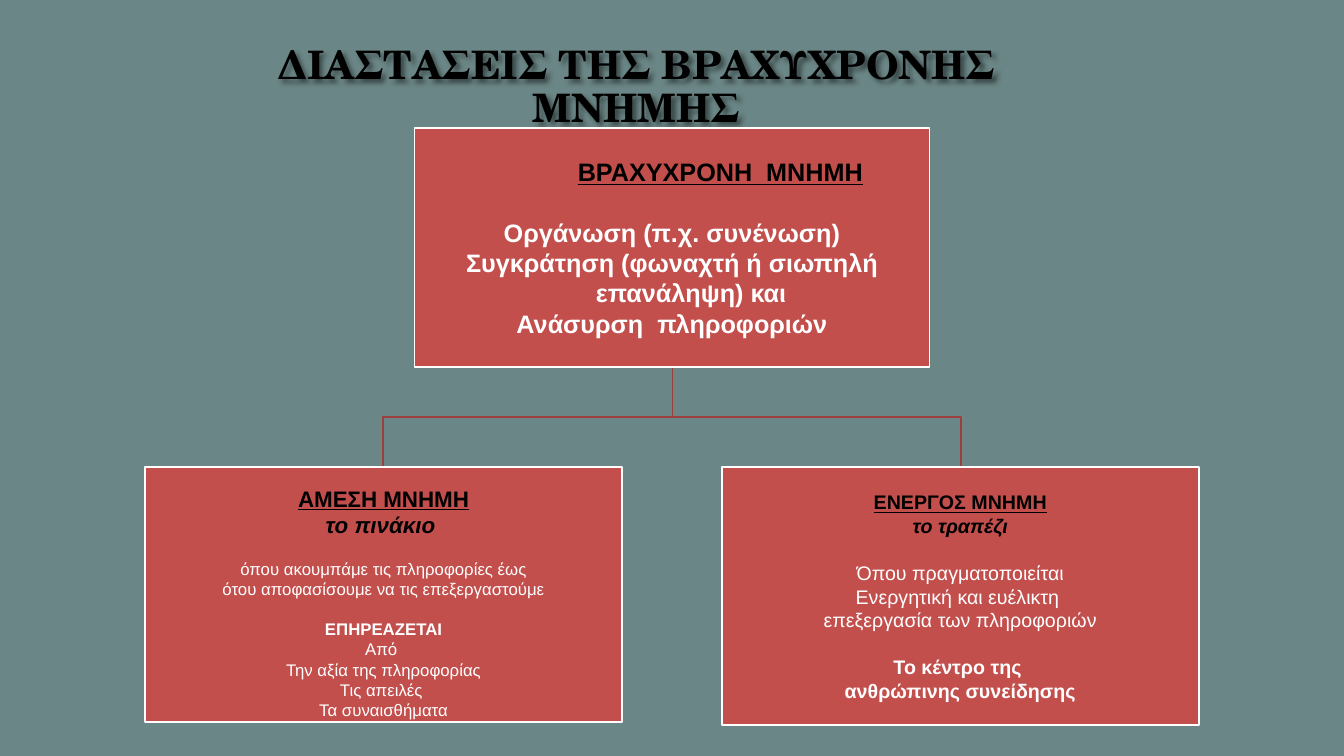
from lxml import etree
from pptx import Presentation
from pptx.dml.color import RGBColor
from pptx.enum.shapes import MSO_SHAPE as Shape
from pptx.enum.text import MSO_ANCHOR as Anchor, PP_ALIGN as Align
from pptx.oxml.ns import qn
from pptx.util import Inches, Pt

TEAL = RGBColor(0x6B, 0x86, 0x86)
RED = RGBColor(0xC3, 0x4F, 0x4D)
DARK_RED = RGBColor(0x9C, 0x3F, 0x3E)
WHITE = RGBColor(0xFF, 0xFF, 0xFF)
BLACK = RGBColor(0, 0, 0)

HEADING = dict(bold=True, underline=True, color=BLACK)
IMAGE = dict(bold=True, italic=True, color=BLACK)
STRONG = dict(bold=True, color=WHITE)
PLAIN = dict(bold=False, color=WHITE)


def add_line(para, text, size, style, font="Arial"):
    para.alignment = Align.CENTER
    span = para.add_run()
    span.text = text
    span.font.name = font
    span.font.size = Pt(size)
    for name, value in style.items():
        if name == "color":
            span.font.color.rgb = value
        else:
            setattr(span.font, name, value)


deck = Presentation()
deck.slide_width, deck.slide_height = Inches(13.33), Inches(7.5)
page = deck.slides.add_slide(deck.slide_layouts[6])
page.background.fill.solid()
page.background.fill.fore_color.rgb = TEAL

# Title with a soft shadow
title = page.shapes.add_textbox(Inches(2.17), Inches(0.25), Inches(8.28), Inches(1.25))
title.text_frame.word_wrap = True
title.text_frame.vertical_anchor = Anchor.MIDDLE
para = title.text_frame.paragraphs[0]
para.line_spacing = 0.9
add_line(para, "ΔΙΑΣΤΑΣΕΙΣ ΤΗΣ ΒΡΑΧΥΧΡΟΝΗΣ ΜΝΗΜΗΣ", 28,
         dict(bold=True, color=BLACK), "TeX Gyre Schola")
effects = etree.SubElement(title.element.spPr, qn("a:effectLst"))
shadow = etree.SubElement(effects, qn("a:outerShdw"), blurRad="38100", dist="38100", dir="2700000")
shade = etree.SubElement(shadow, qn("a:srgbClr"), val="000000")
etree.SubElement(shade, qn("a:alpha"), val="45000")

# Branches from the parent box to its two children
for child_x in (9.53, 3.8):
    pen = page.shapes.build_freeform(Inches(6.67), Inches(3.64))
    pen.add_line_segments([(Inches(x), Inches(y)) for x, y in
                           ((6.67, 4.14), (child_x, 4.14), (child_x, 4.63))], close=False)
    branch = pen.convert_to_shape()
    branch.shadow.inherit = False
    branch.fill.background()
    branch.line.color.rgb = DARK_RED
    branch.line.width = Pt(1.25)

# Boxes: position, top and bottom inset, hanging indent,
# then lines of text, size, style and space before in points
BOXES = [
    ((4.11, 1.27, 5.11, 2.37), 0.01, 0.01, 0.38, [
        ("ΒΡΑΧΥΧΡΟΝΗ  ΜΝΗΜΗ", 18, HEADING, 0),
        ("Οργάνωση (π.χ. συνένωση)", 18, STRONG, 21.6),
        ("Συγκράτηση (φωναχτή ή σιωπηλή επανάληψη) και", 18, STRONG, 0),
        ("Ανάσυρση  πληροφοριών", 18, STRONG, 0)]),
    ((1.44, 4.63, 4.73, 2.53), 0.17, 0.01, 0, [
        ("ΑΜΕΣΗ ΜΝΗΜΗ", 16, HEADING, 0),
        ("το πινάκιο ", 16, IMAGE, 0),
        ("όπου ακουμπάμε τις πληροφορίες έως", 12, PLAIN, 14.4),
        ("ότου αποφασίσουμε να τις επεξεργαστούμε", 12, PLAIN, 0),
        ("ΕΠΗΡΕΑΖΕΤΑΙ", 12, STRONG, 14.4),
        ("Από ", 12, PLAIN, 0),
        ("Την αξία της πληροφορίας", 12, PLAIN, 0),
        ("Τις απειλές ", 12, PLAIN, 0),
        ("Τα συναισθήματα", 12, PLAIN, 0)]),
    ((7.16, 4.63, 4.73, 2.56), 0.24, 0.23, 0, [
        ("ΕΝΕΡΓΟΣ ΜΝΗΜΗ", 14, HEADING, 0),
        ("το τραπέζι", 14, IMAGE, 0),
        ("Όπου πραγματοποιείται", 14, PLAIN, 16.8),
        ("Ενεργητική και ευέλικτη ", 14, PLAIN, 0),
        ("επεξεργασία των πληροφοριών", 14, PLAIN, 0),
        ("Το κέντρο της ", 14, STRONG, 16.8),
        ("ανθρώπινης συνείδησης", 14, STRONG, 0)]),
]
for place, top, bottom, hanging, lines in BOXES:
    box = page.shapes.add_shape(Shape.RECTANGLE, *map(Inches, place))
    box.shadow.inherit = False
    box.fill.solid()
    box.fill.fore_color.rgb = RED
    box.line.color.rgb = WHITE
    box.line.width = Pt(1.25)
    frame = box.text_frame
    layout = dict(word_wrap=True, vertical_anchor=Anchor.MIDDLE,
                  margin_left=Inches(0.01), margin_right=Inches(0.01),
                  margin_top=Inches(top), margin_bottom=Inches(bottom))
    for name, value in layout.items():
        setattr(frame, name, value)
    for number, (text, size, style, gap) in enumerate(lines):
        para = frame.add_paragraph() if number else frame.paragraphs[0]
        para.space_before = Pt(gap)
        add_line(para, text, size, style)
        if hanging:
            # The heading of the parent box sits right of the centre
            indent = (hanging, -hanging) if number else (0.96, 0)
            for name, value in zip(("marL", "indent"), indent):
                para._p.get_or_add_pPr().set(name, str(Inches(value)))

deck.save("out.pptx")
